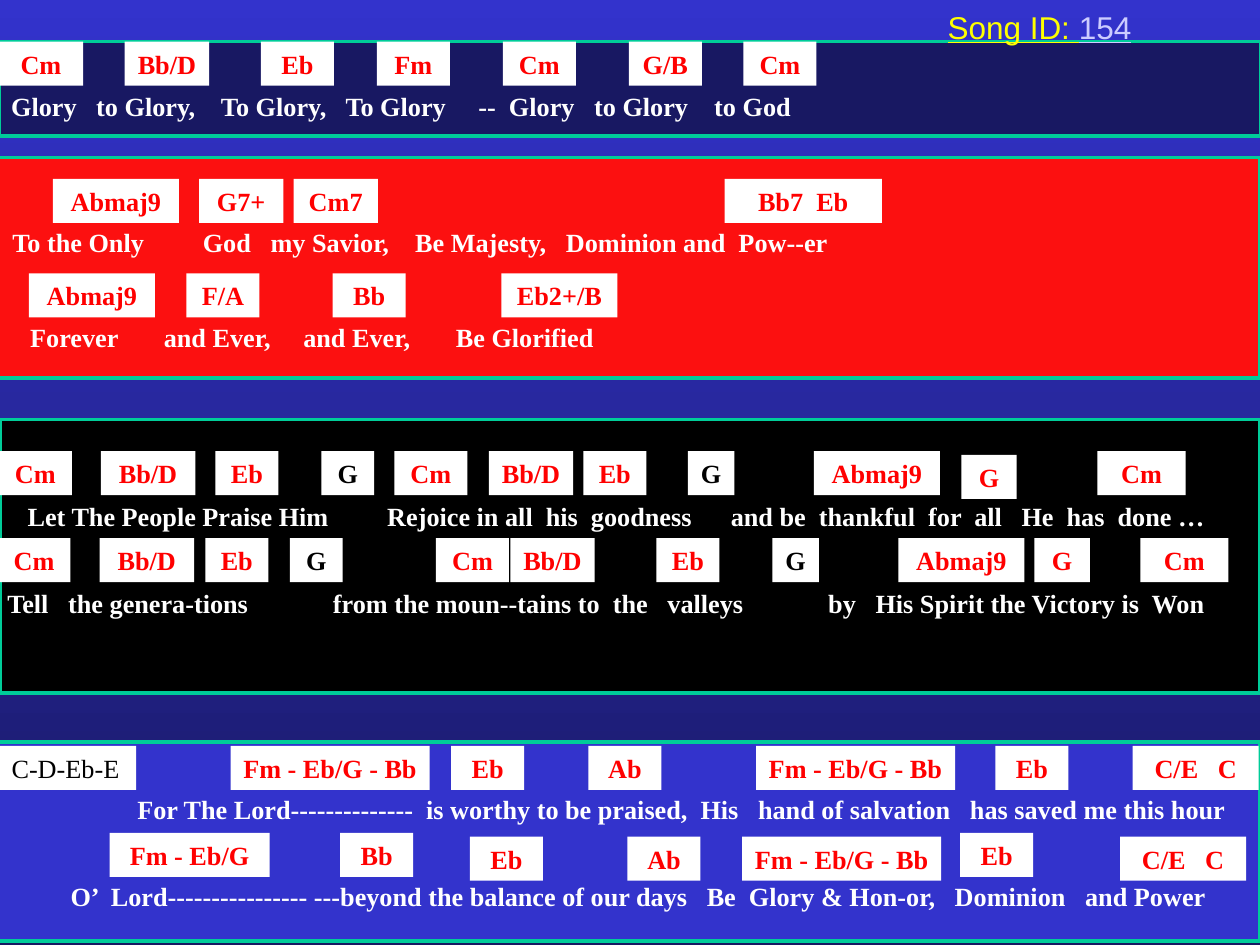
from dataclasses import dataclass

from pptx import Presentation
from pptx.dml.color import RGBColor
from pptx.enum.shapes import MSO_SHAPE as Shape
from pptx.enum.text import MSO_ANCHOR as Anchor, MSO_AUTO_SIZE as AutoSize, PP_ALIGN as Align
from pptx.slide import Slide
from pptx.util import Pt

PX = 9144
WIDTH, HEIGHT = 1000, 750
ROW_HEIGHT = 35
CHORD_DROP = 3

BLUE = RGBColor(0x33, 0x33, 0xCC)
NAVY = RGBColor(0x18, 0x18, 0x62)
SCARLET = RGBColor(0xFC, 0x10, 0x10)
RED = RGBColor(0xFF, 0x00, 0x00)
BLACK = RGBColor(0x00, 0x00, 0x00)
WHITE = RGBColor(0xFF, 0xFF, 0xFF)
GREEN = RGBColor(0x00, 0xCC, 0x99)
YELLOW = RGBColor(0xFF, 0xFF, 0x00)
LAVENDER = RGBColor(0xCC, 0xCC, 0xFF)


@dataclass(frozen=True)
class Band:
    left: int
    top: int
    width: int
    height: int
    color: RGBColor


@dataclass(frozen=True)
class Lyric:
    left: int
    top: int
    text: str
    indent: int = 0


@dataclass(frozen=True)
class Chord:
    left: int
    width: int
    name: str
    color: RGBColor = RED
    drop: int = 0
    bold: bool = True


@dataclass(frozen=True)
class Line:
    top: int
    chords: list[Chord]
    lyric: Lyric


BANDS = [
    Band(-1, 33, 1002, 75, NAVY),
    Band(-2, 589, 1002, 158, BLUE),
    Band(-2, 125, 1002, 175, SCARLET),
    Band(0, 333, 1000, 217, BLACK),
]

LINES = [
    Line(33, [
        Chord(-1, 67, "Cm"), Chord(99, 67, "Bb/D"), Chord(207, 58, "Eb"),
        Chord(299, 58, "Fm"), Chord(399, 58, "Cm"), Chord(499, 58, "G/B"),
        Chord(590, 58, "Cm"),
    ], Lyric(-1, 67, "Glory   to Glory,    To Glory,   To Glory     --  Glory   to Glory    to God")),
    Line(142, [
        Chord(42, 100, "Abmaj9"), Chord(158, 67, "G7+"), Chord(233, 67, "Cm7"),
        Chord(575, 125, "Bb7  Eb"),
    ], Lyric(0, 175, "To the Only         God   my Savior,    Be Majesty,   Dominion and  Pow--er")),
    Line(217, [
        Chord(23, 100, "Abmaj9"), Chord(148, 58, "F/A"), Chord(264, 58, "Bb"),
        Chord(398, 92, "Eb2+/B"),
    ], Lyric(-2, 250, "Forever       and Ever,     and Ever,       Be Glorified", 16)),
    Line(358, [
        Chord(-1, 58, "Cm"), Chord(80, 75, "Bb/D"), Chord(171, 50, "Eb"),
        Chord(255, 42, "G", BLACK), Chord(313, 58, "Cm"), Chord(388, 67, "Bb/D"),
        Chord(463, 50, "Eb"), Chord(546, 37, "G", BLACK), Chord(646, 100, "Abmaj9"),
        Chord(763, 44, "G", drop=CHORD_DROP), Chord(871, 70, "Cm"),
    ], Lyric(-4, 392, "Let The People Praise Him         Rejoice in all  his  goodness      "
             "and be  thankful  for  all   He  has  done …", 16)),
    Line(427, [
        Chord(-2, 58, "Cm"), Chord(79, 75, "Bb/D"), Chord(163, 50, "Eb"),
        Chord(230, 42, "G", BLACK), Chord(346, 58, "Cm"), Chord(405, 67, "Bb/D"),
        Chord(521, 50, "Eb"), Chord(613, 37, "G", BLACK), Chord(713, 100, "Abmaj9"),
        Chord(821, 44, "G"), Chord(905, 70, "Cm"),
    ], Lyric(-4, 461, "Tell   the genera-tions             from the moun--tains to  the   valleys"
             "             by   His Spirit the Victory is  Won")),
    Line(592, [
        Chord(-4, 112, "C-D-Eb-E", BLACK, bold=False), Chord(183, 158, "Fm - Eb/G - Bb"),
        Chord(358, 58, "Eb"), Chord(467, 58, "Ab"), Chord(600, 158, "Fm - Eb/G - Bb"),
        Chord(790, 58, "Eb"), Chord(899, 100, "C/E   C"),
    ], Lyric(0, 625, "For The Lord--------------  is worthy to be praised,  His   hand of salvation"
             "   has saved me this hour", 99)),
    Line(661, [
        Chord(87, 127, "Fm - Eb/G"), Chord(270, 58, "Bb"),
        Chord(373, 58, "Eb", drop=CHORD_DROP), Chord(498, 58, "Ab", drop=CHORD_DROP),
        Chord(589, 158, "Fm - Eb/G - Bb", drop=CHORD_DROP), Chord(762, 58, "Eb"),
        Chord(889, 100, "C/E   C", drop=CHORD_DROP),
    ], Lyric(4, 694, "O’  Lord---------------- ---beyond the balance of our days   "
             "Be  Glory & Hon-or,   Dominion   and Power", 42)),
]


def scale(*lengths: int) -> list[int]:
    return [length * PX for length in lengths]


def add_rectangle(page: Slide, left: int, top: int, width: int, height: int, color: RGBColor):
    box = page.shapes.add_shape(Shape.RECTANGLE, *scale(left, top, width, height))
    box.shadow.inherit = False
    box.fill.solid()
    box.fill.fore_color.rgb = color
    return box


def write(para, text: str, color: RGBColor, bold: bool = True) -> None:
    para.text = text
    para.font.name = "Times New Roman"
    para.font.size = Pt(15)
    para.font.bold = bold
    para.font.color.rgb = color


def add_band(page: Slide, band: Band) -> None:
    box = add_rectangle(page, band.left, band.top, band.width, band.height, band.color)
    box.line.color.rgb = GREEN
    box.line.width = Pt(2)


def add_lyric(page: Slide, lyric: Lyric) -> None:
    box = page.shapes.add_textbox(*scale(lyric.left, lyric.top, WIDTH, ROW_HEIGHT))
    frame = box.text_frame
    frame.word_wrap = True
    frame.margin_left += lyric.indent * PX
    write(frame.paragraphs[0], lyric.text, WHITE)


def add_chord(page: Slide, chord: Chord, top: int) -> None:
    box = add_rectangle(page, chord.left, top + chord.drop, chord.width, ROW_HEIGHT, WHITE)
    box.line.fill.background()
    frame = box.text_frame
    frame.word_wrap = False
    frame.vertical_anchor = Anchor.MIDDLE
    para = frame.paragraphs[0]
    para.alignment = Align.CENTER
    write(para, chord.name, chord.color, chord.bold)


def set_title(page: Slide) -> None:
    title = page.shapes.title
    title.left, title.top, title.width, title.height = scale(742, 1, 175, 40)
    page.shapes.element.append(title.element)
    frame = title.text_frame
    frame.auto_size = AutoSize.NONE
    frame.word_wrap = True
    frame.vertical_anchor = Anchor.TOP
    para = frame.paragraphs[0]
    para.alignment = Align.LEFT
    para.font.name = "Arial"
    para.font.size = Pt(18)
    para.font.underline = True
    for text, color in (("Song ID: ", YELLOW), ("154", LAVENDER)):
        span = para.add_run()
        span.text = text
        span.font.color.rgb = color


def set_background(page: Slide) -> None:
    fill = page.background.fill
    fill.gradient()
    fill.gradient_angle = 270
    for stop, color in zip(fill.gradient_stops, (BLUE, NAVY)):
        stop.color.rgb = color


def main() -> None:
    deck = Presentation()
    deck.slide_width, deck.slide_height = scale(WIDTH, HEIGHT)
    page = deck.slides.add_slide(deck.slide_layouts[5])
    set_background(page)
    for band in BANDS:
        add_band(page, band)
    for line in LINES:
        add_lyric(page, line.lyric)
        for chord in line.chords:
            add_chord(page, chord, line.top)
    set_title(page)
    deck.save("out.pptx")


if __name__ == "__main__":
    main()
